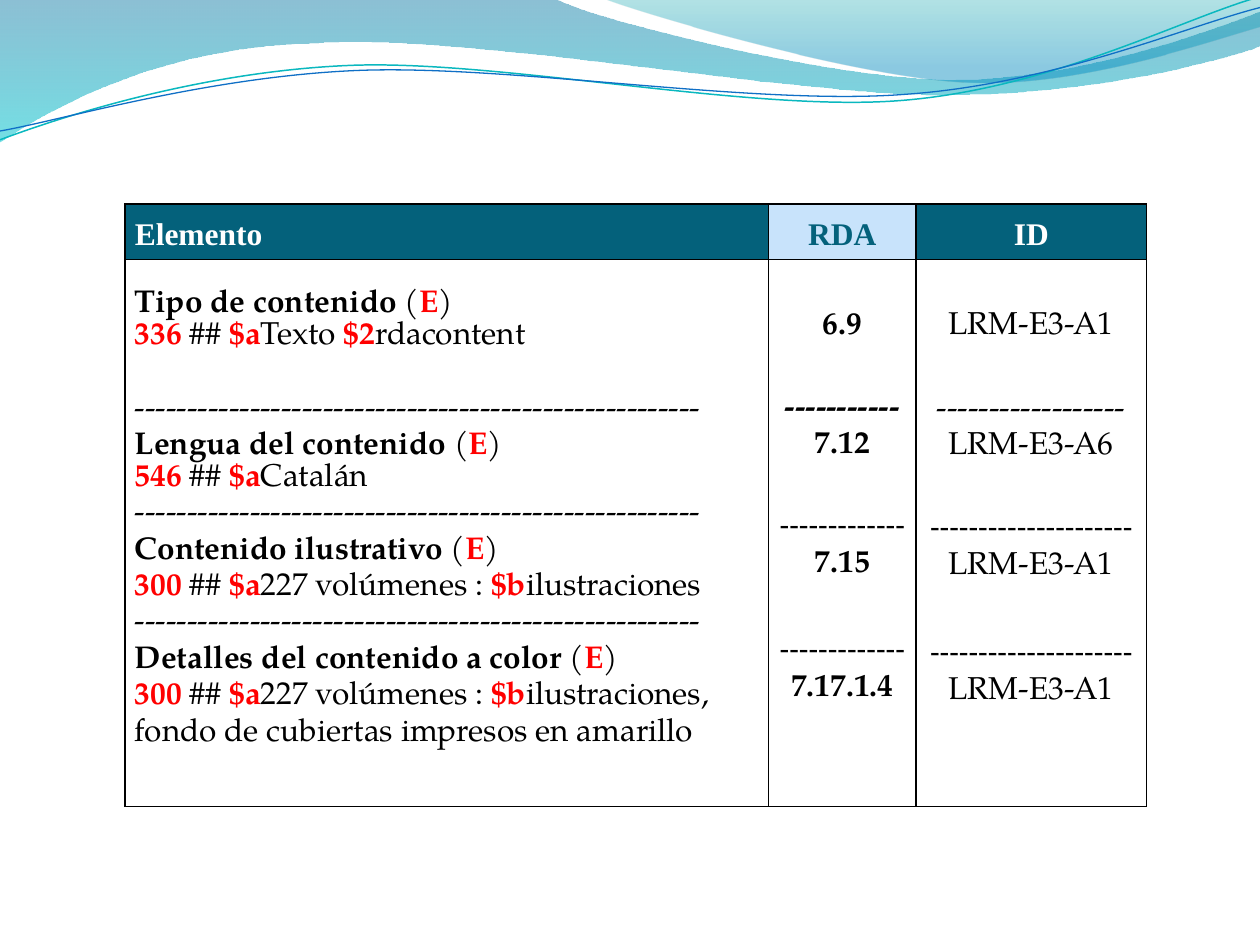
from lxml import etree
from pptx import Presentation, util as u
from pptx.dml.color import RGBColor
from pptx.enum import text
from pptx.oxml.ns import qn

COLORS = dict(teal="04617B", sky="C8E3FB", white="FFFFFF", black="000000", red="FF0000",
              aqua_line="0AB8BF", blue_line="0F6FC6")
SERIF, BOOK, SANS = "Times New Roman", "TeX Gyre Pagella", "Calibri"

# Text styles
STYLES = {
    "plain": dict(name=BOOK, bold=False, color="black"),
    "bold": dict(name=BOOK, bold=True, color="black"),
    "red": dict(name=BOOK, bold=True, color="red"),
    "dash": dict(name=SANS, bold=False, color="black"),
    "head": dict(name=SERIF, bold=True, color="white"),
    "head_teal": dict(name=SERIF, bold=True, color="teal"),
}
LEFT, CENTER = text.PP_ALIGN.LEFT, text.PP_ALIGN.CENTER
TOP, MIDDLE = text.MSO_ANCHOR.TOP, text.MSO_ANCHOR.MIDDLE


def line(content, style="plain", gap=0):
    return dict(spans=[(content, style)], spacing=1.15, gap=gap)


def element(name):
    spans = [(name, "bold"), (" (", "plain"), ("E", "red"), (")", "plain")]
    return dict(spans=spans, spacing=1.15, gap=0)


def field(tag, *subfields, spacing=1.15):
    spans = [(tag, "red"), (" ## ", "plain")]
    for code, value in subfields:
        spans += [(code, "red"), (value, "plain")]
    return dict(spans=spans, spacing=spacing, gap=0)


# Table content: one list of paragraphs per cell
RULE = line("-" * 54)
VOLUMES = ("$a", "227 volúmenes : ")
GAPS = (22.5, 25.3)
ROWS = [
    [[line("Elemento", "head")], [line("RDA", "head_teal")], [line("ID", "head")]],
    [[element("Tipo de contenido"),
      field("336", ("$a", "Texto "), ("$2", "rdacontent"), spacing=1.0)],
     [line("6.9", "bold")],
     [line("LRM-E3-A1")]],
    [[RULE, element("Lengua del contenido"), field("546", ("$a", "Catalán"), spacing=1.0),
      RULE, element("Contenido ilustrativo"), field("300", VOLUMES, ("$b", "ilustraciones")),
      RULE, element("Detalles del contenido a color"),
      field("300", VOLUMES, ("$b", "ilustraciones, fondo de cubiertas impresos en amarillo"))],
     [line("-" * 11, "bold"), line("7.12", "bold"),
      line("-" * 13, "dash", GAPS[0]), line("7.15", "bold"),
      line("-" * 13, "dash", GAPS[1]), line("7.17.1.4", "bold")],
     [line("-" * 18), line("LRM-E3-A6"),
      line("-" * 21, "dash", GAPS[0]), line("LRM-E3-A1"),
      line("-" * 21, "dash", GAPS[1]), line("LRM-E3-A1")]],
]
COLUMN_WIDTHS, ROW_HEIGHTS = (5.11, 1.17, 1.83), (0.44, 1.04, 3.3)
TABLE_LEFT, TABLE_TOP = 0.99, 1.62
HEADER_FILLS = ("teal", "sky", "teal")

# Waves: a point is a straight step, three points are a Bézier curve
BANDS = [
    dict(stops=[("0074A1", 45), ("00C6CF", 55)], ends=(0, 1), steps=[
        (0, 0), (4.4, -0.01),
        ((4.76, 0.17), (6.64, 0.63), (7.58, 0.63)),
        ((8.53, 0.63), (9.58, 0.26), (10, 0.09)),
        (10.01, 0.36),
        ((9.83, 0.44), (8.7, 0.76), (7.46, 0.75)),
        ((6.22, 0.75), (3.82, 0.28), (2.57, 0.34)),
        ((1.29, 0.36), (0.46, 0.83), (-0.01, 1.13)),
        (0, 0)]),
    dict(stops=[("00A1A9", 30), ("008BBF", 45)], ends=(0, 0.8), steps=[
        (4.79, -0.01),
        ((5.09, 0.11), (6.82, 0.62), (7.69, 0.65)),
        ((8.56, 0.69), (9.61, 0.32), (10, 0.21)),
        (10, 0), (4.79, -0.01)]),
]
STRANDS = [
    dict(color="aqua_line", width=0.85, steps=[
        (0, 1.11),
        ((0.48, 0.93), (1.58, 0.57), (2.77, 0.52)),
        ((3.95, 0.47), (5.93, 0.89), (7.13, 0.8)),
        ((8.33, 0.71), (9.38, 0.15), (9.98, -0.02))]),
    dict(color="blue_line", width=0.75, steps=[
        (0, 1.04),
        ((0.47, 0.96), (1.64, 0.61), (2.83, 0.56)),
        ((4.03, 0.51), (5.97, 0.84), (7.17, 0.75)),
        ((8.36, 0.67), (9.41, 0.21), (10, 0.06))]),
]


def rgb(name):
    return RGBColor.from_string(COLORS[name])


def is_curve(step):
    return isinstance(step[0], tuple)


def add_outline(page, steps, close):
    knots = [step[-1] if is_curve(step) else step for step in steps]
    start, *rest = [(u.Inches(x), u.Inches(y)) for x, y in knots]
    builder = page.shapes.build_freeform(*start)
    builder.add_line_segments(rest, close=close)
    shape = builder.convert_to_shape()
    shape.shadow.inherit = False
    # Bend the straight segments that are curves
    segments = list(shape._element.spPr.iter(qn("a:lnTo")))
    for segment, step in zip(segments, steps[1:]):
        if is_curve(step):
            curve = etree.Element(qn("a:cubicBezTo"))
            for x, y in step:
                etree.SubElement(curve, qn("a:pt"), x=str(u.Inches(x) - shape.left),
                                 y=str(u.Inches(y) - shape.top))
            segment.getparent().replace(segment, curve)
    return shape


def add_band(page, band):
    shape = add_outline(page, band["steps"], True)
    shape.line.fill.background()
    shape.fill.gradient()
    shape.fill.gradient_angle = 270
    for stop, (color, _), position in zip(shape.fill.gradient_stops, band["stops"], band["ends"]):
        stop.color.rgb = RGBColor.from_string(color)
        stop.position = position
    colors = shape._element.spPr.iter(qn("a:srgbClr"))
    for node, (_, alpha) in zip(list(colors), band["stops"]):
        etree.SubElement(node, qn("a:alpha"), val=str(alpha * 1000))


def add_strand(page, strand):
    shape = add_outline(page, strand["steps"], False)
    shape.fill.background()
    shape.line.color.rgb = rgb(strand["color"])
    shape.line.width = u.Pt(strand["width"])


def set_borders(cell, hidden):
    props = cell._tc.get_or_add_tcPr()
    for side in "LRTB":
        edge = etree.SubElement(props, qn("a:ln" + side), w=str(u.Pt(1)))
        if side == hidden:
            etree.SubElement(edge, qn("a:noFill"))
        else:
            fill = etree.SubElement(edge, qn("a:solidFill"))
            etree.SubElement(fill, qn("a:srgbClr"), val=COLORS["black"])


def write(cell, paragraphs, align):
    frame = cell.text_frame
    for i, item in enumerate(paragraphs):
        para = frame.add_paragraph() if i else frame.paragraphs[0]
        layout = dict(alignment=align, line_spacing=item["spacing"],
                      space_before=u.Pt(item["gap"]), space_after=u.Pt(0))
        for key, value in layout.items():
            setattr(para, key, value)
        for content, style in item["spans"]:
            span = para.add_run()
            span.text = content
            span.font.size = u.Pt(18)
            for key, value in STYLES[style].items():
                if key == "color":
                    span.font.color.rgb = rgb(value)
                else:
                    setattr(span.font, key, value)


def add_elements_table(page):
    sizes = (TABLE_LEFT, TABLE_TOP, sum(COLUMN_WIDTHS), sum(ROW_HEIGHTS))
    table = page.shapes.add_table(len(ROWS), len(COLUMN_WIDTHS), *map(u.Inches, sizes)).table
    table.first_row = table.horz_banding = False
    for column, width in zip(table.columns, COLUMN_WIDTHS):
        column.width = u.Inches(width)
    for row, height in zip(table.rows, ROW_HEIGHTS):
        row.height = u.Inches(height)
    for r, row in enumerate(ROWS):
        for c, paragraphs in enumerate(row):
            cell = table.cell(r, c)
            top = 0.2 if (r, c) == (1, 0) else 0
            middle = r == 0 or (r == 1 and c > 0)
            layout = dict(margin_left=u.Inches(0.08), margin_right=u.Inches(0.08),
                          margin_top=u.Inches(top), margin_bottom=0,
                          vertical_anchor=MIDDLE if middle else TOP)
            for key, value in layout.items():
                setattr(cell, key, value)
            set_borders(cell, hidden={1: "B", 2: "T"}.get(r))
            if r == 0:
                cell.fill.solid()
                cell.fill.fore_color.rgb = rgb(HEADER_FILLS[c])
            else:
                cell.fill.background()
            write(cell, paragraphs, CENTER if c else LEFT)


def main():
    deck = Presentation()
    deck.slide_width, deck.slide_height = u.Inches(10), u.Inches(7.5)
    page = deck.slides.add_slide(deck.slide_layouts[6])
    for band in BANDS:
        add_band(page, band)
    for strand in STRANDS:
        add_strand(page, strand)
    add_elements_table(page)
    deck.save("out.pptx")


if __name__ == "__main__":
    main()
